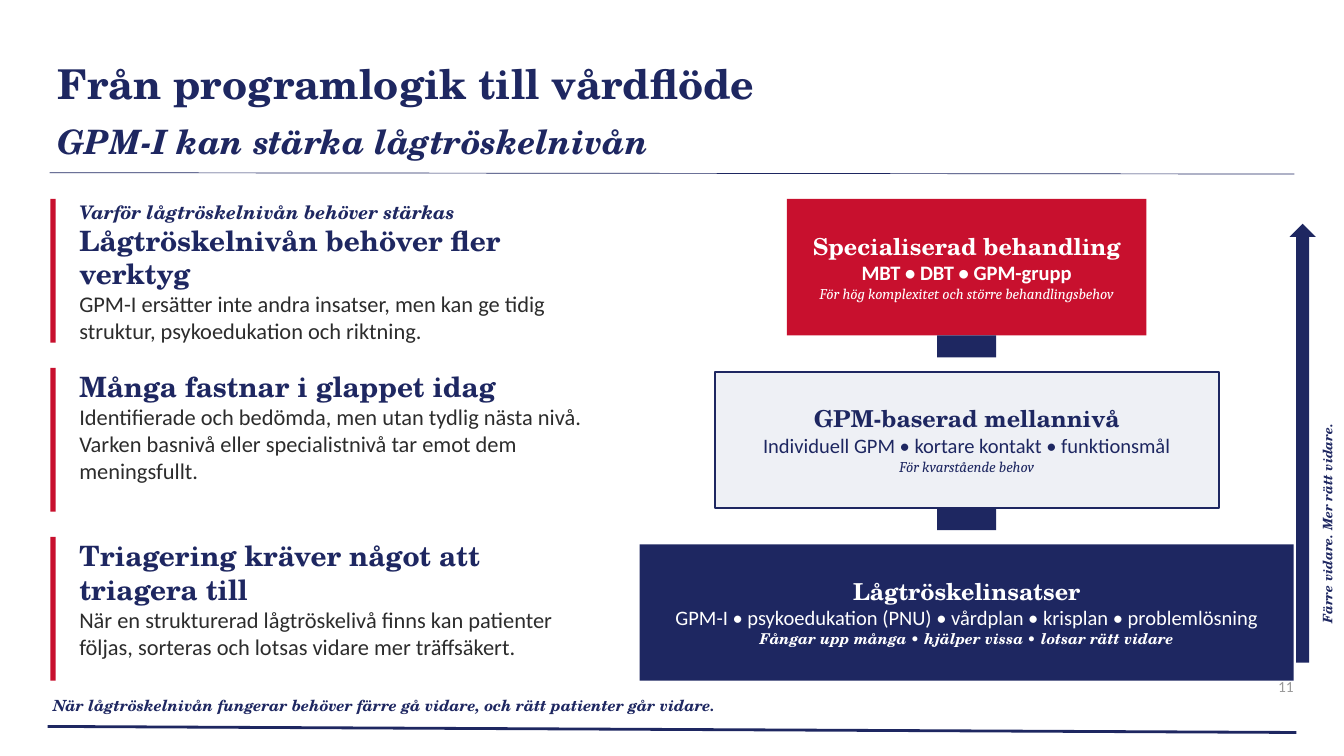
from pptx import Presentation
from pptx.dml.color import RGBColor
from pptx.enum.shapes import MSO_CONNECTOR, MSO_SHAPE
from pptx.enum.text import MSO_ANCHOR, PP_ALIGN
from pptx.oxml.ns import qn
from pptx.util import Inches, Pt
from lxml.etree import SubElement

THEME = {"navy": "1E2761", "red": "C8102E", "pale": "EEF0F5", "white": "FFFFFF",
         "ink": "2C2C2C", "grey": "999999", "serif": "TeX Gyre Schola",
         "sans": "Calibri", "note": "Cambria"}
STYLES = {
    "title": ("serif", 44, 57.6, True, False),
    "subtitle": ("serif", 36, 57.6, True, True),
    "kicker": ("serif", 20, 24, True, True),
    "heading": ("serif", 30, 36, True, False),
    "body": ("sans", 24, 28.8, False, False),
    "level": ("serif", 25, 30, True, False),
    "methods": ("sans", 22, 26.4, False, False),
    "methods_bold": ("sans", 22, 26.4, True, False),
    "remark": ("note", 16, 19.2, False, True),
    "remark_bold": ("serif", 16, 19.2, True, True),
    "footer": ("serif", 16.5, 19.8, True, True),
    "number": ("sans", 16.5, 19.8, False, False),
    "side": ("serif", 14, None, True, True),
}

TITLE = [("Från programlogik till vårdflöde", "title", "navy"),
         ("GPM-I kan stärka lågtröskelnivån", "subtitle", "navy")]
CARDS = [
    [("Varför lågtröskelnivån behöver stärkas", "kicker", "navy"),
     ("Lågtröskelnivån behöver fler verktyg", "heading", "navy"),
     ("GPM-I ersätter inte andra insatser, men kan ge tidig struktur, "
      "psykoedukation och riktning.", "body", "ink")],
    [("Många fastnar i glappet idag", "heading", "navy"),
     ("Identifierade och bedömda, men utan tydlig nästa nivå. Varken basnivå "
      "eller specialistnivå tar emot dem meningsfullt.", "body", "ink")],
    [("Triagering kräver något att triagera till", "heading", "navy"),
     ("När en strukturerad lågtröskelivå finns kan patienter följas, sorteras "
      "och lotsas vidare mer träffsäkert.", "body", "ink")],
]
LEVELS = [
    (5.35, "red", None,
     [("Specialiserad behandling", "level", "white"),
      ("MBT • DBT • GPM-grupp", "methods_bold", "white"),
      ("För hög komplexitet och större behandlingsbehov", "remark", "white")]),
    (7.5, "pale", "navy",
     [("GPM-baserad mellannivå", "level", "navy"),
      ("Individuell GPM • kortare kontakt • funktionsmål", "methods", "navy"),
      ("För kvarstående behov", "remark", "navy")]),
    (9.73, "navy", None,
     [("Lågtröskelinsatser", "level", "white"),
      ("GPM-I • psykoedukation (PNU) • vårdplan • krisplan • problemlösning",
       "methods", "white"),
      ("Fångar upp många • hjälper vissa • lotsar rätt vidare",
       "remark_bold", "white")]),
]
FOOTER = [("När lågtröskelnivån fungerar behöver färre gå vidare, och rätt "
           "patienter går vidare.", "footer", "navy")]
NUMBER = [("11", "number", "grey")]
SIDE = [("Färre vidare. Mer rätt vidare.", "side", "navy")]
RULES = [(0.74, 2.57, 19.26, 2.59, 0.75), (0.71, 10.81, 19.29, 10.9, 3)]

TOP = 2.96
CARD_X, CARD_H, CARD_STEP = 0.75, 2.14, 2.515
LEVEL_MID, LEVEL_H, LEVEL_STEP = 14.385, 2.03, 2.57
LINK_W, LINK_H = 0.88, 0.33


def color(name):
    return RGBColor.from_string(THEME[name])


def write(sp, lines, align=PP_ALIGN.LEFT, anchor=MSO_ANCHOR.TOP, inset=0):
    tf = sp.text_frame
    frame = {"word_wrap": True, "vertical_anchor": anchor}
    for side in ("left", "top", "right", "bottom"):
        frame["margin_" + side] = Inches(inset)
    for key, value in frame.items():
        setattr(tf, key, value)
    for i, (text, style, ink) in enumerate(lines):
        p = tf.add_paragraph() if i else tf.paragraphs[0]
        face, size, leading, bold, italic = STYLES[style]
        p.alignment = align
        if leading:
            p.line_spacing = Pt(leading)
        r = p.add_run()
        r.text = text
        font = {"name": THEME[face], "size": Pt(size), "bold": bold, "italic": italic}
        for key, value in font.items():
            setattr(r.font, key, value)
        r.font.color.rgb = color(ink)


def add_text(s, box, lines, **kw):
    sp = s.shapes.add_textbox(*map(Inches, box))
    write(sp, lines, **kw)
    return sp


def add_block(s, box, fill, line=None, kind=MSO_SHAPE.RECTANGLE):
    sp = s.shapes.add_shape(kind, *map(Inches, box))
    sp.shadow.inherit = False
    sp.fill.solid()
    sp.fill.fore_color.rgb = color(fill)
    if line:
        sp.line.color.rgb = color(line)
        sp.line.width = Pt(2.25)
    else:
        sp.line.fill.background()
    return sp


def add_rule(s, x1, y1, x2, y2, width):
    c = s.shapes.add_connector(MSO_CONNECTOR.STRAIGHT, *map(Inches, (x1, y1, x2, y2)))
    c.line.color.rgb = color("navy")
    c.line.width = Pt(width)
    SubElement(c.element.spPr, qn("a:effectLst"))


def main():
    prs = Presentation()
    prs.slide_width, prs.slide_height = Inches(20), Inches(11.25)
    s = prs.slides.add_slide(prs.slide_layouts[6])

    add_text(s, (0.85, 0.8, 18.3, 1.58), TITLE)
    for rule in RULES:
        add_rule(s, *rule)

    for i, lines in enumerate(CARDS):
        y = TOP + i * CARD_STEP
        add_block(s, (CARD_X, y, 0.08, CARD_H), "red")
        add_text(s, (CARD_X + 0.43, y + 0.03, 7.61, CARD_H), lines)

    for i, (width, fill, line, lines) in enumerate(LEVELS):
        y = TOP + i * LEVEL_STEP
        if i:
            link_y = y - LEVEL_STEP + LEVEL_H
            add_block(s, (LEVEL_MID - LINK_W / 2, link_y, LINK_W, LINK_H), "navy")
        sp = add_block(s, (LEVEL_MID - width / 2, y, width, LEVEL_H), fill, line)
        write(sp, lines, align=PP_ALIGN.CENTER, anchor=MSO_ANCHOR.MIDDLE, inset=0.06)

    middle = MSO_ANCHOR.MIDDLE
    add_text(s, (0.79, 10.2, 18, 0.58), FOOTER, anchor=middle)
    add_text(s, (18.75, 9.98, 0.5, 0.48), NUMBER, align=PP_ALIGN.RIGHT, anchor=middle)
    add_block(s, (19.19, 3.33, 0.39, 6.53), "navy", kind=MSO_SHAPE.UP_ARROW)
    side = add_text(s, (16.97, 6.44, 5.56, 0.31), SIDE, anchor=middle, inset=0.1)
    side.rotation = 270

    prs.save("out.pptx")


if __name__ == "__main__":
    main()
